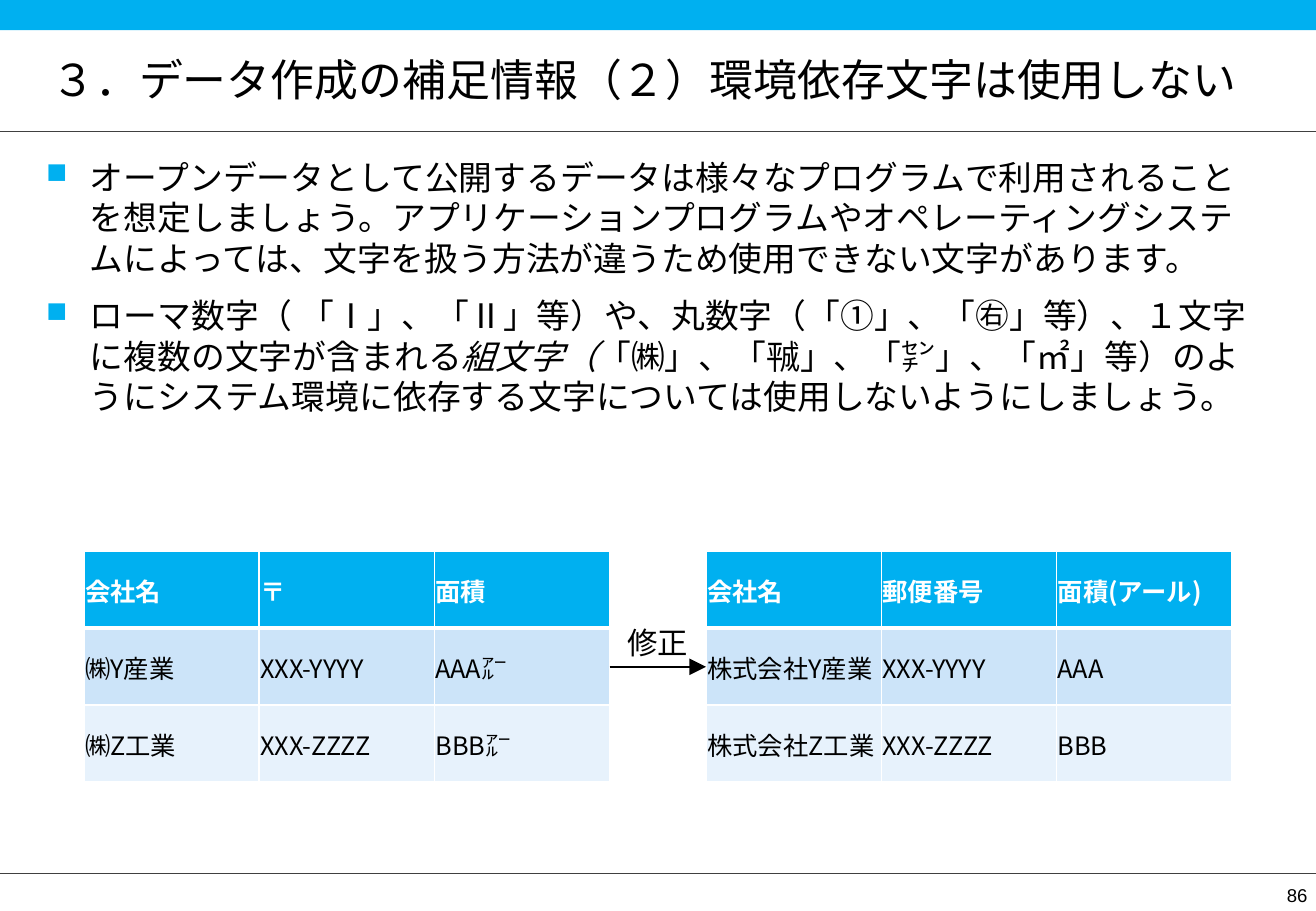
from lxml.etree import SubElement
from pptx import Presentation
from pptx.dml.color import RGBColor
from pptx.enum.lang import MSO_LANGUAGE_ID
from pptx.enum.shapes import MSO_CONNECTOR, MSO_SHAPE
from pptx.enum.text import MSO_ANCHOR, PP_ALIGN
from pptx.oxml.ns import qn
from pptx.util import Inches, Pt

WIDE, HIGH = Inches(10.83), Inches(7.5)
SANS = "Noto Sans CJK JP"
BLUE, BLACK, WHITE, GREY = "00B0F0", "000000", "FFFFFF", "404040"
BANDS = ["CCE4F9", "E7F2FC"]

TITLE = "３．データ作成の補足情報（２）環境依存文字は使用しない"
POINTS = [
    [("オープンデータとして公開するデータは様々なプログラムで利用されることを想定しましょう。"
      "アプリケーションプログラムやオペレーティングシステムによっては、"
      "文字を扱う方法が違うため使用できない文字があります。", False)],
    [("ローマ数字（ 「Ⅰ」、「Ⅱ」等）や、丸数字（「①」、「㊨」等）、"
      "１文字に複数の文字が含まれる", False),
     ("組文字（", True),
     ("「㈱」、「㍻」、「㌢」、「㎡」等）のようにシステム環境に依存する文字については"
      "使用しないようにしましょう。", False)],
]
BEFORE = [["会社名", "〒", "面積"],
          ["㈱Y産業", "XXX-YYYY", "AAA㌃"],
          ["㈱Z工業", "XXX-ZZZZ", "BBB㌃"]]
AFTER = [["会社名", "郵便番号", "面積(アール)"],
         ["株式会社Y産業", "XXX-YYYY", "AAA"],
         ["株式会社Z工業", "XXX-ZZZZ", "BBB"]]

# Tables, in percent of the slide
LEFT, RIGHT, TOP = 6.37, 53.65, 60.53
SPAN, DEPTH = 39.95, 25.3
GAP = RIGHT - LEFT - SPAN


def area(x, y, w, h):
    """Turn percent of the slide into lengths."""
    return (round(WIDE * x / 100), round(HIGH * y / 100),
            round(WIDE * w / 100), round(HIGH * h / 100))


def paint(target, color):
    """Give a fill one solid colour."""
    target.solid()
    target.fore_color.rgb = RGBColor.from_string(color)


def write(para, text, size=20, face=SANS, color=BLACK, bold=False,
          italic=False, align=PP_ALIGN.LEFT):
    """Add a run of text to a paragraph."""
    para.alignment = align
    run = para.add_run()
    run.text = text
    font = run.font
    font.size, font.name, font.bold, font.italic = Pt(size), face, bold, italic
    font.language_id = MSO_LANGUAGE_ID.JAPANESE
    paint(font.fill, color)
    SubElement(font._element, qn("a:ea"), typeface=face)


def inset(frame, x, y, anchor=MSO_ANCHOR.TOP):
    """Set wrapping, side and top margins, and anchor."""
    frame.word_wrap = True
    frame.margin_left = frame.margin_right = Inches(x)
    frame.margin_top = frame.margin_bottom = Inches(y)
    frame.vertical_anchor = anchor
    return frame


def label(slide, place, text, margin=(0.1, 0.05), anchor=MSO_ANCHOR.TOP, **style):
    box = slide.shapes.add_textbox(*area(*place))
    frame = inset(box.text_frame, *margin, anchor)
    write(frame.paragraphs[0], text, **style)


def head(slide):
    title = slide.shapes.title
    title.left, title.top, title.width, title.height = area(3.9, 4.4, 92.24, 8.53)
    frame = inset(title.text_frame, 0, 0, MSO_ANCHOR.MIDDLE)
    write(frame.paragraphs[0], TITLE, size=26)


def bullet(para):
    props = para._p.get_or_add_pPr()
    props.set("marL", str(Inches(0.36)))
    props.set("indent", str(-Inches(0.36)))
    tint = SubElement(props, qn("a:buClr"))
    SubElement(tint, qn("a:srgbClr"), val=BLUE)
    SubElement(props, qn("a:buSzPct"), val="85000")
    SubElement(props, qn("a:buChar"), char="■")


def body(slide):
    box = slide.shapes.add_textbox(*area(3.51, 16.67, 92.34, 76.8))
    frame = inset(box.text_frame, 0, 0.04)
    for num, point in enumerate(POINTS):
        para = frame.add_paragraph() if num else frame.paragraphs[0]
        bullet(para)
        para.space_before = Pt(10 if num else 0)
        for text, slant in point:
            write(para, text, italic=slant)


def rule(slide, x, y, w, color=GREY, weight=1, arrow=False):
    """Draw a level line, with an arrowhead if asked."""
    left, top, width, _ = area(x, y, w, 0)
    line = slide.shapes.add_connector(
        MSO_CONNECTOR.STRAIGHT, left, top, left + width, top)
    line.line.width = Pt(weight)
    paint(line.line.fill, color)
    if arrow:
        SubElement(line.line._get_or_add_ln(), qn("a:tailEnd"),
                   type="triangle", w="lg", len="lg")
    SubElement(line._element.spPr, qn("a:effectLst"))


def edge(cell, widths):
    """Draw white borders: left, right, top, bottom."""
    props = cell._tc.get_or_add_tcPr()
    for side, width in zip("LRTB", widths):
        line = SubElement(props, qn(f"a:ln{side}"), w=str(Pt(width)))
        fill = SubElement(line, qn("a:solidFill"))
        SubElement(fill, qn("a:srgbClr"), val=WHITE)


def grid(slide, left, rows):
    shape = slide.shapes.add_table(
        len(rows), len(rows[0]), *area(left, TOP, SPAN, DEPTH))
    for r, row in enumerate(rows):
        top = r == 0
        for c, text in enumerate(row):
            cell = shape.table.cell(r, c)
            cell.margin_left = cell.margin_right = cell.margin_top = Inches(0.01)
            cell.margin_bottom = 0
            cell.vertical_anchor = MSO_ANCHOR.MIDDLE
            edge(cell, (1, 1, 3 if r == 1 else 1, 3 if top else 1))
            paint(cell.fill, BLUE if top else BANDS[r - 1])
            write(cell.text_frame.paragraphs[0], text, size=15, bold=top,
                  color=WHITE if top else BLACK)


def main():
    deck = Presentation()
    deck.slide_width, deck.slide_height = WIDE, HIGH
    slide = deck.slides.add_slide(deck.slide_layouts[5])

    band = slide.shapes.add_shape(MSO_SHAPE.RECTANGLE, *area(0, 0, 100, 3.33))
    band.shadow.inherit = False
    paint(band.fill, BLUE)
    band.line.fill.background()
    for y in (14.43, 95.88):
        rule(slide, 0, y, 100)
    label(slide, (95.94, 96.27, 4.06, 3.73), "86", margin=(0.07, 0.04),
          anchor=MSO_ANCHOR.BOTTOM, size=11, face="Arial", align=PP_ALIGN.RIGHT)

    head(slide)
    body(slide)
    grid(slide, LEFT, BEFORE)
    grid(slide, RIGHT, AFTER)
    rule(slide, LEFT + SPAN, 73.2, GAP, color=BLACK, weight=1.5, arrow=True)
    label(slide, (LEFT + SPAN, 67.87, GAP, 5.33), "修正", size=18,
          align=PP_ALIGN.CENTER)
    deck.save("out.pptx")


if __name__ == "__main__":
    main()
